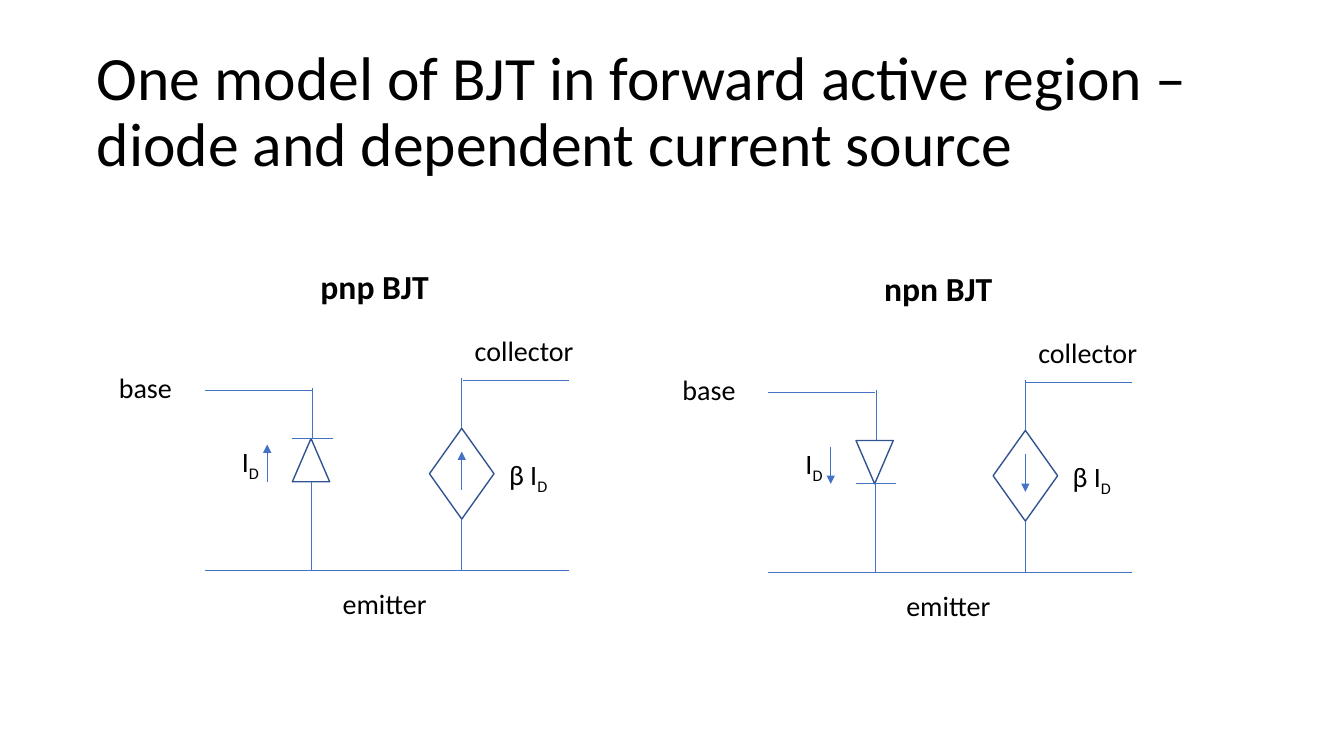
from dataclasses import dataclass

from lxml import etree
from pptx import Presentation
from pptx import util as u
from pptx.dml.color import RGBColor
from pptx.enum import shapes, text
from pptx.oxml.ns import qn

PX = 9144


@dataclass(frozen=True)
class Theme:
    """Colours, font and type sizes."""
    ink: str = "000000"
    wire: str = "4472C4"
    edge: str = "325491"
    font: str = "Calibri"
    title: int = 44
    head: int = 24
    label: int = 20


T = Theme()


def px(*vals):
    """Turn pixel lengths into EMU."""
    return [u.Emu(v * PX) for v in vals]


def write(frame, words, sub="", size=T.label, bold=False, gap=10,
          anchor=text.MSO_ANCHOR.TOP):
    """Write words and an optional subscript into a text frame."""
    frame.word_wrap = True
    frame.auto_size = text.MSO_AUTO_SIZE.NONE
    frame.vertical_anchor = anchor
    para = frame.paragraphs[0]
    para.alignment = text.PP_ALIGN.LEFT
    para.line_spacing = 0.9
    para.space_before = u.Pt(gap)
    for part in filter(None, (words, sub)):
        run = para.add_run()
        run.text = part
        font = run.font
        font.name, font.size, font.bold = T.font, u.Pt(size), bold
        font.color.rgb = RGBColor.from_string(T.ink)
    if sub:
        font._element.set("baseline", "-25000")


def label(group, box, words, **form):
    """Add a text box."""
    write(group.shapes.add_textbox(*px(*box)).text_frame, words, **form)


def outline(group, kind, box):
    """Add an unfilled symbol."""
    shape = group.shapes.add_shape(kind, *px(*box))
    shape.shadow.inherit = False
    shape.fill.background()
    shape.line.color.rgb = RGBColor.from_string(T.edge)
    shape.line.width = u.Pt(1)
    return shape


def wire(group, x1, y1, x2, y2, arrow=False):
    """Add a straight wire, with an arrowhead at its end if asked."""
    line = group.shapes.add_connector(
        shapes.MSO_CONNECTOR.STRAIGHT, *px(x1, y1, x2, y2))
    line.line.color.rgb = RGBColor.from_string(T.wire)
    line.line.width = u.Pt(0.5)
    if arrow:
        etree.SubElement(line.line._get_or_add_ln(), qn("a:tailEnd"),
                         type="triangle")
    etree.SubElement(line._element.spPr, qn("a:effectLst"))
    return line


def title(slide, box, words):
    """Place and write the slide title."""
    head = slide.shapes.title
    head.left, head.top, head.width, head.height = px(*box)
    write(head.text_frame, words, size=T.title, gap=0,
          anchor=text.MSO_ANCHOR.MIDDLE)


def diode(group, x, y, up):
    """Draw the base branch from the base lead down to the emitter rail."""
    wire(group, x, y + 2, x + 106, y + 2)
    wire(group, x + 107, y, x + 107, y + 50)
    tri = outline(group, shapes.MSO_SHAPE.ISOSCELES_TRIANGLE,
                  (x + 87, y + 50, 37, 43))
    tri.rotation = 0 if up else 180
    bar = y + (50 if up else 93)
    wire(group, x + 87, bar, x + 127, bar)
    wire(group, x + 106, y + 93, x + 106, y + 181)
    ends = (y + 93, y + 56) if up else (y + 56, y + 93)
    wire(group, x + 62, ends[0], x + 62, ends[1], arrow=True)
    label(group, (x + 27, y + 52, 61, 44), "I", sub="D")


def source(group, x, y, up):
    """Draw the collector branch with its dependent current source."""
    gem = outline(group, shapes.MSO_SHAPE.DIAMOND, (x, y + 50, 64, 90))
    mid = x + 32
    wire(group, mid, y, mid, y + 50).end_connect(gem, 0)
    wire(group, mid, y + 140, mid, y + 191).begin_connect(gem, 2)
    wire(group, mid + 1, y + 2, mid + 106, y + 2)
    ends = (y + 111, y + 73) if up else (y + 73, y + 111)
    wire(group, mid, ends[0], mid, ends[1], arrow=True)
    label(group, (x + 69, y + 74, 61, 44), "β I", sub="D")


def model(slide, x, y, name, up):
    """Draw one transistor model; up sets the current direction."""
    group = slide.shapes.add_group_shape()
    label(group, (x + 200, y, 141, 57), name, size=T.head, bold=True)
    diode(group, x + 95, y + 122, up)
    source(group, x + 318, y + 112, up)
    wire(group, x + 95, y + 303, x + 456, y + 303)
    label(group, (x, y + 103, 111, 41), "base")
    label(group, (x + 222, y + 318, 111, 41), "emitter")
    label(group, (x + 353, y + 67, 127, 44), "collector")


def main():
    """Build the slide and save it."""
    deck = Presentation()
    deck.slide_width, deck.slide_height = px(1333, 750)
    slide = deck.slides.add_slide(deck.slide_layouts[5])
    title(slide, (86, 40, 1161, 145),
          "One model of BJT in forward active region – "
          "diode and dependent current source")
    model(slide, 108, 263, "pnp BJT", True)
    model(slide, 667, 265, "npn BJT", False)
    deck.save("out.pptx")


if __name__ == "__main__":
    main()
